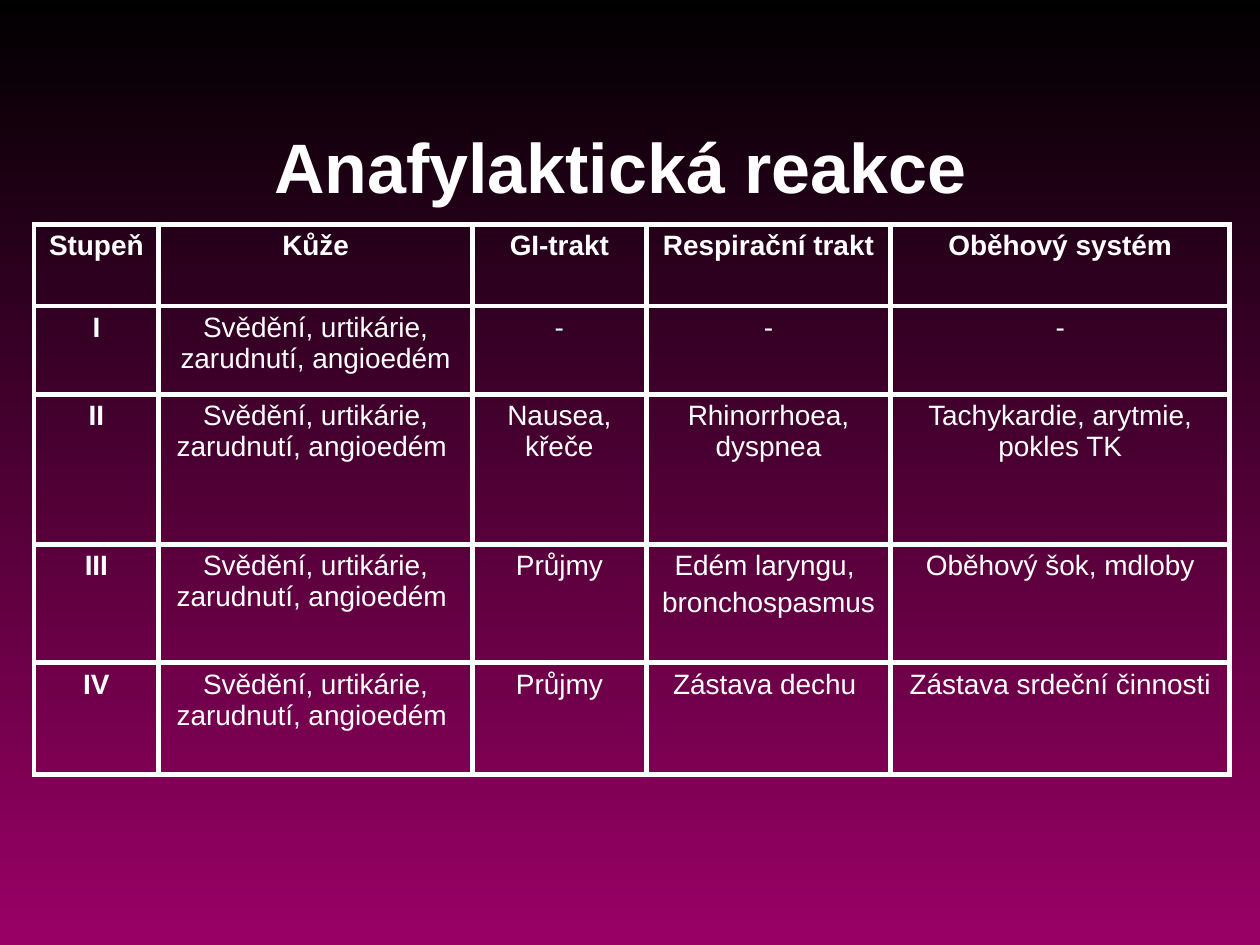
import pptx
import pptx.dml.color
import pptx.enum.text
import pptx.oxml
import pptx.oxml.ns
import pptx.util
from pptx.util import Inches

COLORS = {"text": "FFFFFF", "pale": "CCFFFF", "border": "FFFFFF",
          "top": "000000", "bottom": "990066"}
SKIN = "Svědění, urtikárie, zarudnutí, angioedém"
HEADINGS = ["Stupeň", "Kůže", "GI-trakt", "Respirační trakt", "Oběhový systém"]
GRADES = [
    ["I", SKIN, "-", "-", "-"],
    ["II", SKIN + " ", "Nausea, křeče", "Rhinorrhoea, dyspnea",
     "Tachykardie, arytmie, pokles TK"],
    ["III", SKIN + " ", "Průjmy", "Edém laryngu, \nbronchospasmus",
     "Oběhový šok, mdloby"],
    ["IV", SKIN + " ", "Průjmy", "Zástava dechu ", "Zástava srdeční činnosti"],
]
COLUMN_WIDTHS = [0.99, 2.49, 1.38, 1.94, 2.69]
ROW_HEIGHTS = [0.65, 0.7, 1.19, 0.94, 0.89]


def rgb(name):
    return pptx.dml.color.RGBColor.from_string(COLORS[name])


class SlideBuilder:
    font = "Arial"
    border_width = pptx.util.Pt(3)

    def __init__(self, slide):
        self.slide = slide

    def background(self, top, bottom):
        fill = self.slide.background.fill
        fill.gradient()
        fill.gradient_angle = 270
        for stop, color, position in zip(fill.gradient_stops, (top, bottom), (0, 1)):
            stop.color.rgb = rgb(color)
            stop.position = position

    def set_text(self, frame, text, size, bold, color="text", space_before=0):
        frame.word_wrap = True
        frame.text = text
        for paragraph in frame.paragraphs:
            paragraph.alignment = pptx.enum.text.PP_ALIGN.CENTER
            paragraph.space_before = pptx.util.Pt(space_before)
            paragraph.font.name = self.font
            paragraph.font.size = pptx.util.Pt(size)
            paragraph.font.bold = bold
            paragraph.font.color.rgb = rgb(color)

    def title(self, text, left, top, width, height):
        box = self.slide.shapes.add_textbox(
            Inches(left), Inches(top), Inches(width), Inches(height))
        self.set_text(box.text_frame, text, 40, True)
        box.text_frame.auto_size = pptx.enum.text.MSO_AUTO_SIZE.SHAPE_TO_FIT_TEXT

    def outline(self, cell):
        properties = cell._tc.get_or_add_tcPr()
        for side in ("lnL", "lnR", "lnT", "lnB"):
            properties.append(pptx.oxml.parse_xml(
                f'<a:{side} {pptx.oxml.ns.nsdecls("a")} w="{self.border_width}">'
                f'<a:solidFill><a:srgbClr val="{COLORS["border"]}"/></a:solidFill>'
                f'</a:{side}>'))

    def table(self, rows, left, top, widths, heights):
        table = self.slide.shapes.add_table(
            len(rows), len(widths), Inches(left), Inches(top),
            Inches(sum(widths)), Inches(sum(heights))).table
        table.horz_banding = False
        for column, width in zip(table.columns, widths):
            column.width = Inches(width)
        for row, height in zip(table.rows, heights):
            row.height = Inches(height)
        for r, texts in enumerate(rows):
            for c, text in enumerate(texts):
                cell = table.cell(r, c)
                color = "pale" if (r, c) == (1, 2) else "text"
                self.set_text(cell.text_frame, text, 16, r == 0 or c == 0, color, 3.2)
                self.outline(cell)
                cell.fill.background()


def main():
    deck = pptx.Presentation()
    deck.slide_width, deck.slide_height = Inches(10), Inches(7.5)
    builder = SlideBuilder(deck.slides.add_slide(deck.slide_layouts[6]))
    builder.background("top", "bottom")
    builder.title("Anafylaktická reakce ", 0, 0.93, 10, 0.77)
    builder.table([HEADINGS] + GRADES, 0.27, 1.78, COLUMN_WIDTHS, ROW_HEIGHTS)
    deck.save("out.pptx")


if __name__ == "__main__":
    main()
